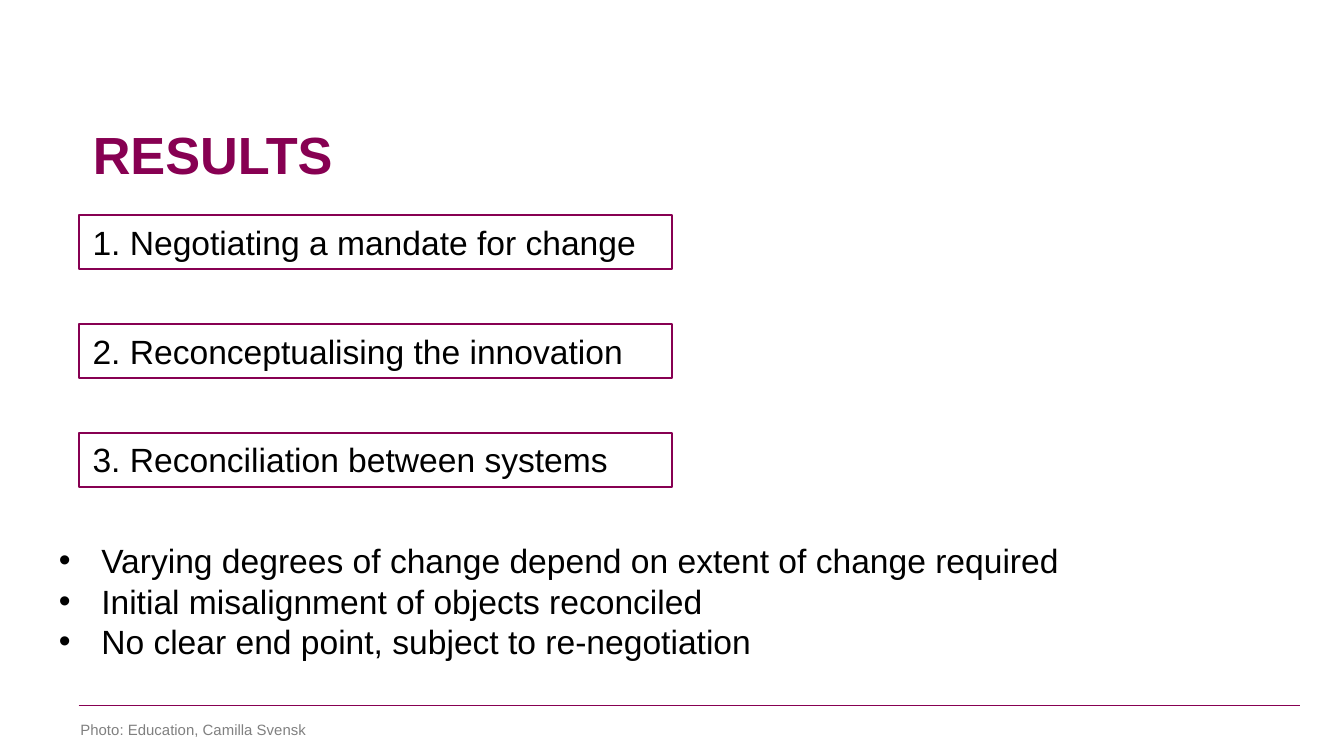
from lxml import etree
from pptx import Presentation
from pptx import util as u
from pptx.dml.color import RGBColor
from pptx.enum import shapes, text
from pptx.oxml.ns import qn

COLORS = {"plum": "870052", "black": "000000", "grey": "808080"}
PX = u.Inches(1) // 200


def px(*lengths):
    """Turn lengths in px into EMU."""
    return [length * PX for length in lengths]


def add_run(paragraph, words, size, color, bold=False):
    """Add one formatted run to a paragraph."""
    run = paragraph.add_run()
    run.text = words
    run.font.name = "Arial"
    run.font.size = u.Pt(size)
    run.font.bold = bold
    run.font.color.rgb = RGBColor.from_string(COLORS[color])


def set_outline(line, points):
    """Give a line the plum colour and a width in points."""
    line.width = u.Pt(points)
    line.color.rgb = RGBColor.from_string(COLORS["plum"])


def set_title(slide, words):
    """Place and format the slide title."""
    title = slide.shapes.title
    title.left, title.top, title.width, title.height = px(118, 172, 1700, 188)
    frame = title.text_frame
    frame.auto_size = text.MSO_AUTO_SIZE.NONE
    frame.vertical_anchor = text.MSO_ANCHOR.TOP
    heading = frame.paragraphs[0]
    heading.alignment = text.PP_ALIGN.LEFT
    add_run(heading, words, 28, "plum", bold=True)


def add_rule(slide, left, right, y):
    """Draw the thin horizontal rule above the credit."""
    rule = slide.shapes.add_connector(
        shapes.MSO_CONNECTOR.STRAIGHT, *px(left, y, right, y))
    set_outline(rule.line, 0.75)
    etree.SubElement(rule._element.spPr, qn("a:effectLst"))


def add_credit(slide, words):
    """Add the small photo credit."""
    credit = slide.shapes.add_textbox(*px(100, 1062, 634, 38))
    credit.text_frame.word_wrap = True
    add_run(credit.text_frame.paragraphs[0], words, 8, "grey")


def add_stage(slide, top, words):
    """Add one outlined box naming a stage."""
    stage = slide.shapes.add_shape(
        shapes.MSO_SHAPE.RECTANGLE, *px(118, top, 882, 81))
    stage.shadow.inherit = False
    stage.fill.background()
    set_outline(stage.line, 1)
    frame = stage.text_frame
    frame.word_wrap = True
    frame.auto_size = text.MSO_AUTO_SIZE.SHAPE_TO_FIT_TEXT
    frame.vertical_anchor = text.MSO_ANCHOR.TOP
    label = frame.paragraphs[0]
    label.alignment = text.PP_ALIGN.LEFT
    add_run(label, words, 18, "black")


def add_bullets(slide, findings):
    """Add the bulleted findings with a hanging indent."""
    box = slide.shapes.add_textbox(*px(68, 794, 1542, 262))
    frame = box.text_frame
    frame.word_wrap = False
    frame.auto_size = text.MSO_AUTO_SIZE.SHAPE_TO_FIT_TEXT
    indent, = px(63)
    for index, finding in enumerate(findings):
        item = frame.add_paragraph() if index else frame.paragraphs[0]
        props = item._p.get_or_add_pPr()
        props.set("marL", str(indent))
        props.set("indent", str(-indent))
        etree.SubElement(props, qn("a:buFont"), typeface="Arial")
        etree.SubElement(props, qn("a:buChar"), char="•")
        add_run(item, finding, 18, "black")


def main():
    """Build the results slide."""
    deck = Presentation()
    deck.slide_width, deck.slide_height = px(2000, 1125)
    slide = deck.slides.add_slide(deck.slide_layouts[5])
    add_rule(slide, 117, 1934, 1050)
    set_title(slide, "RESULTS")
    add_credit(slide, "Photo: Education, Camilla Svensk")
    stages = ["Negotiating a mandate for change",
              "Reconceptualising the innovation",
              "Reconciliation between systems"]
    for index, stage in enumerate(stages):
        add_stage(slide, 320 + 162 * index, f"{index + 1}. {stage}")
    add_bullets(slide, [
        "Varying degrees of change depend on extent of change required",
        "Initial misalignment of objects reconciled",
        "No clear end point, subject to re-negotiation"])
    deck.save("out.pptx")


if __name__ == "__main__":
    main()
